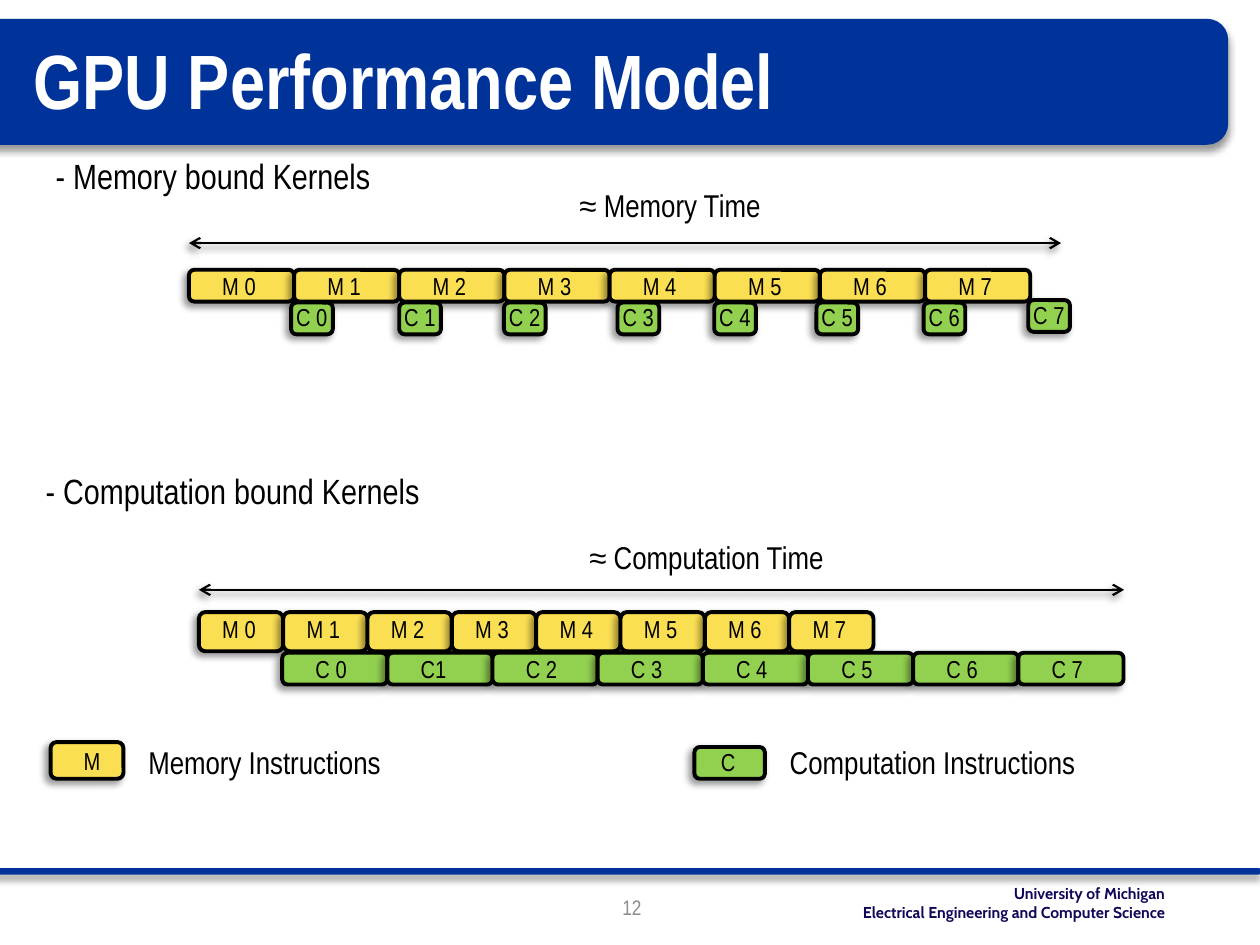
import dataclasses

import pptx
import pptx.dml.color
import pptx.enum.shapes
import pptx.enum.text
import pptx.oxml
import pptx.oxml.ns
import pptx.util

Cm = pptx.util.Cm
Pt = pptx.util.Pt
ALIGN = pptx.enum.text.PP_ALIGN
ANCHOR = pptx.enum.text.MSO_ANCHOR
FIT = pptx.enum.text.MSO_AUTO_SIZE


@dataclasses.dataclass(frozen=True)
class Theme:
    face: str = "Arial Narrow"
    foot_face: str = "Cabin"
    blue: str = "003399"
    navy: str = "0F0958"
    gray: str = "8C8C8C"
    white: str = "FFFFFF"
    black: str = "000000"
    yellow: str = "FBDF53"
    green: str = "92D050"
    title: int = 44
    head: int = 20
    body: int = 18
    block: int = 14
    page: int = 12
    foot: int = 9
    edge: float = 2.25
    arrow: float = 1.25


THEME = Theme()

# All lengths are in centimetres.
BARS = [(-0.64, 0.38, 25.4, 2.54), (-0.43, 17.5, 25.83, 0.13)]
TITLE = ("GPU Performance Model", (0.43, 0, 22.86, 3.18))
PAGE = ("12", (9.78, 17.78, 5.92, 1.02))
FOOT = ("University of Michigan\nElectrical Engineering and Computer Science",
        (16.31, 17.7, 7.42, 1.02))
HEADS = [
    ("- Memory bound Kernels", (0.84, 3, 6.91, 1.12)),
    ("- Computation bound Kernels", (0.64, 9.35, 8.1, 1.12)),
]
SPANS = [
    ("≈ Memory Time", (11.43, 3.63, 5.08, 1.02), (3.81, 21.39, 4.9)),
    ("≈ Computation Time", (11.63, 10.72, 6.35, 1.02), (4.01, 22.66, 11.89)),
]


def steps(left, gap):
    return [left + gap * i for i in range(8)]


MEM = [f"M {i}" for i in range(8)]
COMP = [f"C {i}" for i in range(8)]
LATE = [5.87, 8.05, 10.16, 12.45, 14.4, 16.46, 18.62, 20.73]

# names, lefts, tops, block size, label offset, label width, fill
ROWS = [
    (MEM, steps(3.81, 2.12), [5.44] * 8, (2.12, 0.64),
     (0.42, -0.1), 1.7, THEME.yellow),
    (COMP, LATE, [6.1] * 7 + [6.05], (0.84, 0.64),
     (-0.15, -0.13), 1.22, THEME.green),
    (MEM, steps(4.01, 1.7), [12.34] * 8, (1.7, 0.79),
     (0.22, -0.08), 1.35, THEME.yellow),
    (["C 0", "C1"] + COMP[2:], steps(5.69, 2.12), [13.16] * 8, (2.12, 0.64),
     (0.42, -0.1), 1.7, THEME.green),
]

# mark, block box, label box, fill, meaning, meaning box
KEYS = [
    ("M", (1.02, 14.96, 1.47, 0.74), (1.17, 14.91, 1.37, 0.86), THEME.yellow,
     "Memory Instructions", (2.74, 14.86, 5.41, 1.02)),
    ("C", (14, 15.06, 1.42, 0.64), (14.12, 14.94, 1.12, 0.84), THEME.green,
     "Computation Instructions", (15.67, 14.86, 6.48, 1.02)),
]


def rgb(code):
    return pptx.dml.color.RGBColor.from_string(code)


def shade(shape, angle):
    """Give the shape a soft shadow cast at the angle in degrees."""
    props = shape._element.spPr
    for old in props.findall(pptx.oxml.ns.qn("a:effectLst")):
        props.remove(old)
    props.append(pptx.oxml.parse_xml(
        f'<a:effectLst {pptx.oxml.ns.nsdecls("a")}>'
        f'<a:outerShdw blurRad="{Pt(4)}" dist="{Pt(3)}" dir="{angle * 60000}"'
        f' algn="ctr" rotWithShape="0"><a:srgbClr val="{THEME.black}">'
        '<a:alpha val="40000"/></a:srgbClr></a:outerShdw></a:effectLst>'))


def add_block(slide, box, fill, edge=None, angle=135):
    kind = pptx.enum.shapes.MSO_SHAPE.ROUNDED_RECTANGLE
    shape = slide.shapes.add_shape(kind, *map(Cm, box))
    shape.shadow.inherit = False
    shape.fill.solid()
    shape.fill.fore_color.rgb = rgb(fill)
    if edge:
        shape.line.color.rgb = rgb(edge)
        shape.line.width = Pt(THEME.edge)
    else:
        shape.line.fill.background()
    shade(shape, angle)


def add_text(slide, text, box, size, color=THEME.black, face=THEME.face,
             bold=False, align=ALIGN.LEFT, anchor=ANCHOR.TOP, wrap=True,
             fit=FIT.SHAPE_TO_FIT_TEXT):
    frame = slide.shapes.add_textbox(*map(Cm, box)).text_frame
    frame.text = text
    frame.word_wrap = wrap
    frame.auto_size = fit
    frame.vertical_anchor = anchor
    for para in frame.paragraphs:
        para.alignment = align
        for run in para.runs:
            run.font.name = face
            run.font.size = Pt(size)
            run.font.bold = bold
            run.font.color.rgb = rgb(color)


def add_span(slide, left, right, top):
    """Draw a level line with an open arrow at each end."""
    line = slide.shapes.add_connector(
        pptx.enum.shapes.MSO_CONNECTOR.STRAIGHT,
        Cm(left), Cm(top), Cm(right), Cm(top))
    line.line.color.rgb = rgb(THEME.black)
    line.line.width = Pt(THEME.arrow)
    stroke = line.line._get_or_add_ln()
    for end in ("headEnd", "tailEnd"):
        stroke.append(pptx.oxml.parse_xml(
            f'<a:{end} {pptx.oxml.ns.nsdecls("a")} type="arrow"/>'))
    shade(line, 135)


def main():
    deck = pptx.Presentation()
    deck.slide_width, deck.slide_height = Cm(25.4), Cm(19.05)
    slide = deck.slides.add_slide(deck.slide_layouts[6])

    for box in BARS:
        add_block(slide, box, THEME.blue, angle=90)
    add_text(slide, *FOOT, THEME.foot, THEME.navy, THEME.foot_face,
             bold=True, align=ALIGN.RIGHT)
    add_text(slide, *PAGE, THEME.page, THEME.gray, align=ALIGN.CENTER,
             anchor=ANCHOR.MIDDLE, fit=FIT.NONE)
    add_text(slide, *TITLE, THEME.title, THEME.white, bold=True,
             anchor=ANCHOR.MIDDLE, fit=FIT.NONE)

    for text, box in HEADS:
        add_text(slide, text, box, THEME.head, align=ALIGN.CENTER, wrap=False)
    for names, lefts, tops, size, (dx, dy), wide, fill in ROWS:
        for name, left, top in zip(names, lefts, tops):
            add_block(slide, (left, top, *size), fill, THEME.black)
            add_text(slide, name, (left + dx, top + dy, wide, 0.86),
                     THEME.block)
    for text, box, ends in SPANS:
        add_span(slide, *ends)
        add_text(slide, text, box, THEME.body)
    for mark, block, label, fill, text, box in KEYS:
        add_block(slide, block, fill, THEME.black)
        add_text(slide, mark, label, THEME.block, align=ALIGN.CENTER)
        add_text(slide, text, box, THEME.body, wrap=False)

    deck.save("out.pptx")


if __name__ == "__main__":
    main()
